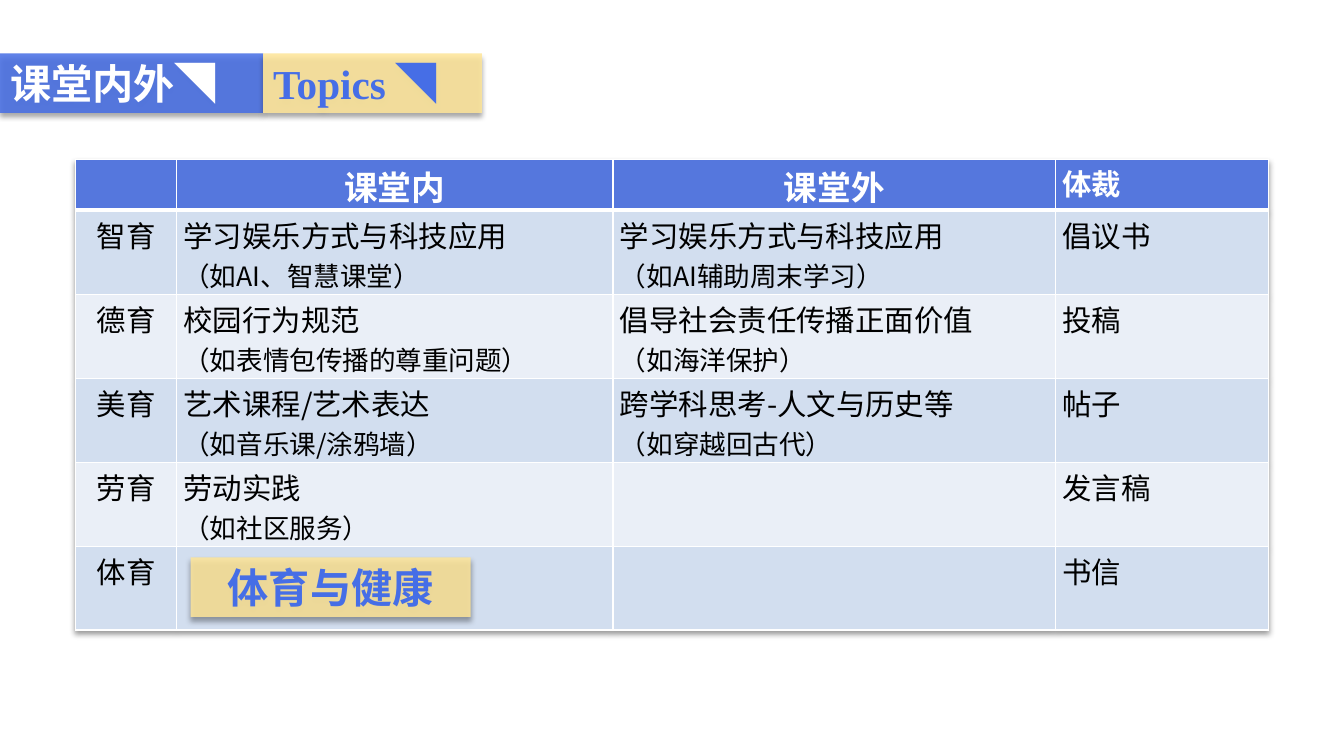
from pptx import Presentation
from pptx import util as u
from pptx.dml.color import RGBColor
from pptx.enum import shapes, text
from pptx.oxml import ns, parse_xml

SANS, SERIF = "Noto Sans CJK SC", "Times New Roman"
BLUE, GOLD, WHITE, BLACK = "466EE6", "FFE699", "FFFFFF", "000000"
HEADER, BANDS = "5577DD", ("D2DEEF", "EAEFF7")
LEFT, CENTER = text.PP_ALIGN.LEFT, text.PP_ALIGN.CENTER
SLIDE_W, SLIDE_H = u.Inches(13.33), u.Inches(7.5)

# Table content: label, in class, out of class, genre
HEADINGS = ["", "课堂内", "课堂外", "体裁"]
TOPICS = [
    ["智育", "学习娱乐方式与科技应用\n（如AI、智慧课堂）",
     "学习娱乐方式与科技应用\n（如AI辅助周末学习）", "倡议书"],
    ["德育", "校园行为规范\n（如表情包传播的尊重问题）",
     "倡导社会责任传播正面价值\n（如海洋保护）", "投稿"],
    ["美育", "艺术课程/艺术表达\n（如音乐课/涂鸦墙）",
     "跨学科思考-人文与历史等\n（如穿越回古代）", "帖子"],
    ["劳育", "劳动实践\n（如社区服务）", "", "发言稿"],
    ["体育", "", "", "书信"],
]


def across(percent):
    return u.Emu(round(SLIDE_W * percent / 100))


def down(percent):
    return u.Emu(round(SLIDE_H * percent / 100))


def paint(fill, color, alpha=None):
    fill.solid()
    fill.fore_color.rgb = RGBColor.from_string(color)
    if alpha:
        clr = fill._xPr.find(".//" + ns.qn("a:srgbClr"))
        clr.append(parse_xml(f'<a:alpha {ns.nsdecls("a")} val="{alpha * 1000}"/>'))


def soft_shadow():
    return parse_xml(
        f'<a:outerShdw {ns.nsdecls("a")} blurRad="{u.Pt(4)}" dist="{u.Pt(3)}" '
        f'dir="5400000" algn="t" rotWithShape="0"><a:srgbClr val="{BLACK}">'
        '<a:alpha val="40000"/></a:srgbClr></a:outerShdw>')


def add_text(p, words, size, color, font=SANS, bold=False, align=LEFT):
    p.alignment = align
    r = p.add_run()
    r.text = words
    r.font.size, r.font.bold, r.font.name = u.Pt(size), bold, font
    paint(r.font.fill, color)
    r.font._element.find(ns.qn("a:latin")).addnext(
        parse_xml(f'<a:ea {ns.nsdecls("a")} typeface="{SANS}"/>'))


def style_label(sp, left, top, width, fill):
    """Place a coloured label and return its empty first paragraph."""
    sp.left, sp.top = across(left), down(top)
    sp.width, sp.height = across(width), down(7.87)
    paint(sp.fill, fill, 85)
    sp.line.fill.background()
    sp.shadow.inherit = False
    sp._element.spPr.find(ns.qn("a:effectLst")).append(soft_shadow())
    tf = sp.text_frame
    tf.word_wrap, tf.auto_size = True, text.MSO_AUTO_SIZE.NONE
    tf.vertical_anchor = text.MSO_ANCHOR.MIDDLE
    tf.margin_left = tf.margin_right = u.Inches(0.1)
    tf.margin_top = tf.margin_bottom = 0
    return tf.paragraphs[0]


def add_label(s, left, top, width):
    sp = s.shapes.add_shape(shapes.MSO_SHAPE.RECTANGLE, 0, 0, 1, 1)
    return style_label(sp, left, top, width, GOLD)


def style_cell(cell, fill, top_margin, bottom_border=1):
    cell.margin_left = cell.margin_right = u.Inches(0.07)
    cell.margin_top, cell.margin_bottom = u.Inches(top_margin), 0
    paint(cell.fill, fill)
    tcPr = cell._tc.get_or_add_tcPr()
    for i, side in enumerate("LRTB"):
        width = u.Pt(bottom_border if side == "B" else 1)
        tcPr.insert(i, parse_xml(
            f'<a:ln{side} {ns.nsdecls("a")} w="{width}"><a:solidFill>'
            f'<a:srgbClr val="{WHITE}"/></a:solidFill></a:ln{side}>'))


def add_topic_table(s):
    widths, heights = [7.5, 32.48, 32.93, 15.83], [6.67] + [11.07] * len(TOPICS)
    frame = s.shapes.add_table(len(heights), len(widths), across(5.63), down(21.07),
                               across(sum(widths)), down(sum(heights)))
    table = frame.table
    table.horz_banding = False
    effects = parse_xml(f'<a:effectLst {ns.nsdecls("a")}/>')
    effects.append(soft_shadow())
    table._tbl.tblPr.insert(0, effects)
    for column, width in zip(table.columns, widths):
        column.width = across(width)
    for row, height in zip(table.rows, heights):
        row.height = down(height)

    # Header row
    for c, heading in enumerate(HEADINGS):
        cell = table.cell(0, c)
        style_cell(cell, HEADER, 0.02, bottom_border=3)
        if heading:
            genre = c == len(HEADINGS) - 1
            add_text(cell.text_frame.paragraphs[0], heading, 21 if genre else 24,
                     WHITE, bold=True, align=LEFT if genre else CENTER)

    # Banded topic rows: main line, then a smaller example
    for r, topic in enumerate(TOPICS):
        for c, words in enumerate(topic):
            cell = table.cell(r + 1, c)
            style_cell(cell, BANDS[r % 2], 0.03)
            if not words:
                continue
            tf = cell.text_frame
            for i, line in enumerate(words.split("\n")):
                p = tf.add_paragraph() if i else tf.paragraphs[0]
                add_text(p, line, 19 if i else 21, BLACK,
                         align=LEFT if c else CENTER)


def main():
    prs = Presentation()
    prs.slide_width, prs.slide_height = SLIDE_W, SLIDE_H
    s = prs.slides.add_slide(prs.slide_layouts[5])

    # Title banner
    p = style_label(s.shapes.title, 0, 7.07, 19.58, BLUE)
    add_text(p, "课堂内外◥", 29.4, WHITE, bold=True)
    p = add_label(s, 19.58, 7.07, 16.28)
    add_text(p, "Topics", 29.4, BLUE, font=SERIF, bold=True)
    add_text(p, " ◥", 29.4, BLUE, bold=True)

    # Topics by area, with the highlighted one on top
    add_topic_table(s)
    p = add_label(s, 14.18, 73.73, 20.85)
    add_text(p, "体育与健康", 29.4, BLUE, font=SERIF, bold=True, align=CENTER)

    prs.save("out.pptx")


if __name__ == "__main__":
    main()
